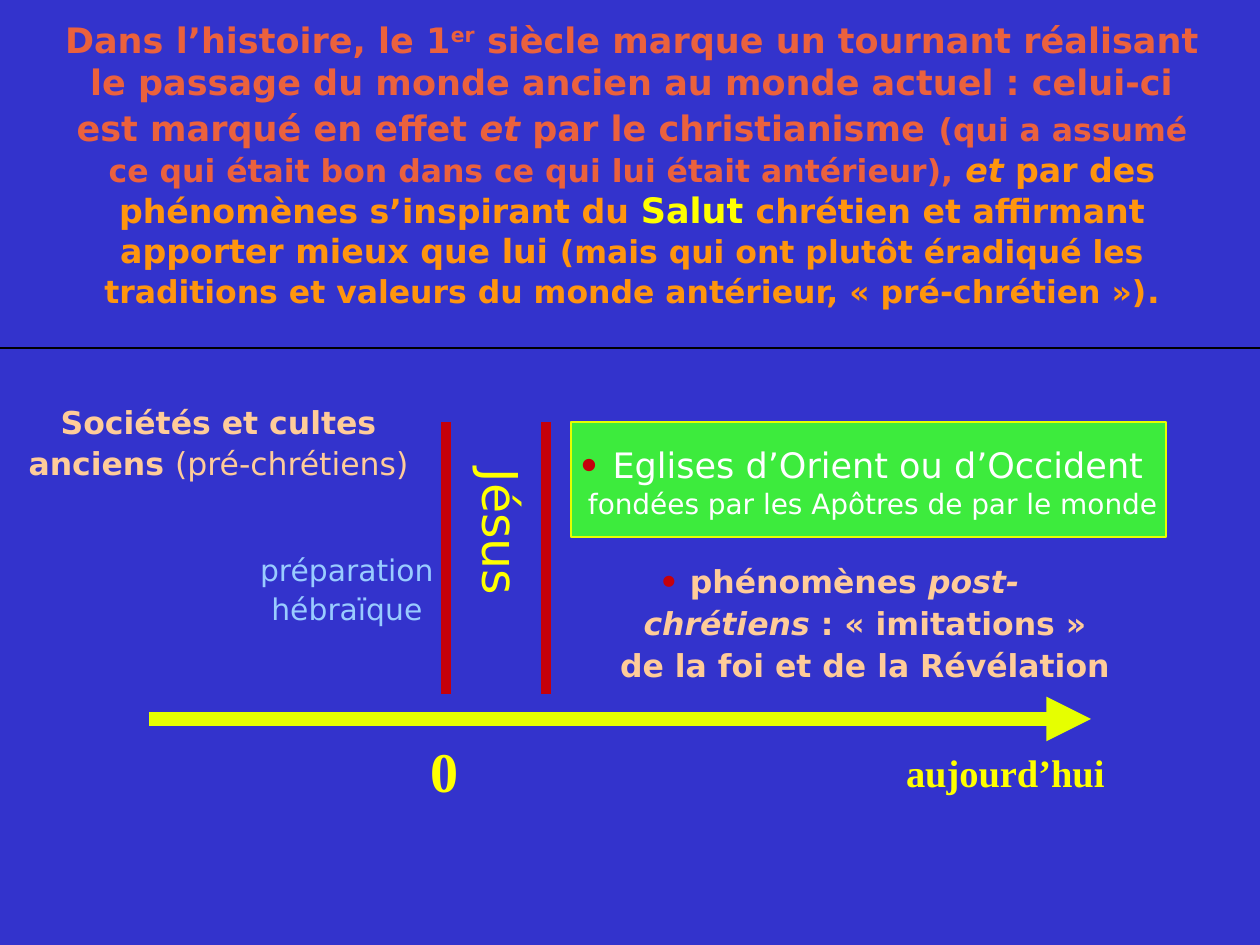
from lxml.etree import SubElement
from pptx import Presentation
from pptx.dml.color import RGBColor
from pptx.enum.shapes import MSO_CONNECTOR, MSO_SHAPE
from pptx.enum.text import MSO_ANCHOR, MSO_AUTO_SIZE, PP_ALIGN
from pptx.oxml.ns import qn
from pptx.util import Emu, Pt

SCALE = 914400 / 126
SANS = "DejaVu Sans"
SERIF = "Times New Roman"

BLUE = RGBColor(0x33, 0x33, 0xCC)
CORAL = RGBColor(0xEB, 0x61, 0x3D)
ORANGE = RGBColor(0xFF, 0x95, 0x0E)
YELLOW = RGBColor(0xFF, 0xFF, 0x00)
LIME = RGBColor(0xE6, 0xFF, 0x00)
RED = RGBColor(0xC5, 0x00, 0x0B)
PEACH = RGBColor(0xFF, 0xCC, 0x99)
GREEN = RGBColor(0x3D, 0xEB, 0x3D)
SKY = RGBColor(0x99, 0xCC, 0xFF)
WHITE = RGBColor(0xFF, 0xFF, 0xFF)
BLACK = RGBColor(0x00, 0x00, 0x00)


def px(length):
    return Emu(round(length * SCALE))


def style(size, color, bold=False, italic=False, name=SANS):
    return {"size": Pt(size), "color": color, "bold": bold, "italic": italic, "name": name}


def apply(target, values):
    for name, value in values.items():
        setattr(target, name, value)


def add_run(paragraph, text, values, baseline=None):
    run = paragraph.add_run()
    run.text = text
    for name, value in values.items():
        if name == "color":
            run.font.color.rgb = value
        else:
            setattr(run.font, name, value)
    if baseline:
        run.font._element.set("baseline", str(baseline))


def write(shape, paragraphs, insets, spacing=None, align=PP_ALIGN.LEFT,
          anchor=MSO_ANCHOR.TOP, indents=()):
    frame = shape.text_frame
    left, top, right, bottom = map(px, insets)
    apply(frame, {"word_wrap": True, "auto_size": MSO_AUTO_SIZE.NONE,
                  "vertical_anchor": anchor, "margin_left": left, "margin_top": top,
                  "margin_right": right, "margin_bottom": bottom})
    indents = dict(indents)
    for index, runs in enumerate(paragraphs):
        paragraph = frame.add_paragraph() if index else frame.paragraphs[0]
        apply(paragraph, {"alignment": align, "line_spacing": spacing,
                          "space_before": Pt(0), "space_after": Pt(0.4)})
        for side, length in {"marL": 0, "marR": 0, **indents.get(index, {})}.items():
            paragraph._p.get_or_add_pPr().set(side, str(px(length)))
        for run in runs:
            add_run(paragraph, *run)


def add_text(slide, box, paragraphs, insets=(0, 6, 0, 6), **options):
    shape = slide.shapes.add_textbox(*map(px, box))
    write(shape, paragraphs, insets, **options)
    return shape


def add_line(slide, start, end, color, width, arrow=False):
    line = slide.shapes.add_connector(MSO_CONNECTOR.STRAIGHT, *map(px, start + end))
    line.line.color.rgb = color
    line.line.width = Pt(width)
    if arrow:
        SubElement(line.line._get_or_add_ln(), qn("a:tailEnd"), type="triangle")
    SubElement(line._element.spPr, qn("a:effectLst"))


def add_header(slide, box):
    left, top, width, height = box
    title = slide.shapes.title
    apply(title, {"left": px(left + 49), "top": px(top + 26),
                  "width": px(width - 94), "height": px(277)})
    coral = style(20, CORAL, bold=True)
    orange = style(19, ORANGE, bold=True)
    write(title, [[
        ("Dans l’histoire, le 1", coral),
        ("er", coral, 33000),
        (" siècle marque un tournant réalisant le passage du monde ancien "
         "au monde actuel : celui-ci est marqué en effet ", coral),
        ("et", {**coral, "italic": True}),
        (" par le christianisme", coral),
        (" ", style(22, CORAL, bold=True)),
        ("(qui a assumé ce qui était bon dans ce qui lui était antérieur),",
         style(18, CORAL, bold=True)),
        (" ", orange),
        ("et", {**orange, "italic": True}),
        (" par des phénomènes s’inspirant du ", orange),
        ("Salut ", style(20, YELLOW, bold=True)),
        ("chrétien et affirmant apporter mieux que lui ", orange),
        ("(mais qui ont plutôt éradiqué les traditions et valeurs du monde "
         "antérieur, « pré-chrétien »)", style(18, ORANGE, bold=True)),
        (".", orange),
    ]], (5, 6, 5, 6), align=PP_ALIGN.CENTER, anchor=MSO_ANCHOR.MIDDLE)
    add_line(slide, (left, top + height), (left + width, top + height), BLACK, 0.75)


def add_ancient_world(slide, box):
    left, top, width, height = box
    centred = {"spacing": 1.1, "align": PP_ALIGN.CENTER}
    add_text(slide, (left, top, 387, 202), [[
        ("Sociétés et cultes anciens ", style(18, PEACH, bold=True)),
        ("(pré-chrétiens)", style(18, PEACH)),
    ]], **centred)
    add_text(slide, (left + width - 188, top + 149, 188, 89),
             [[("préparation hébraïque", style(17, SKY))]], **centred)


def add_turning_point(slide, box):
    left, top, width, height = box
    for x in (left, left + width):
        add_line(slide, (x, top), (x, top + height), RED, 5.67)
    name = add_text(slide, (left + 15, top, 58, 186),
                    [[("Jésus", style(28, YELLOW))]], (0, 47, 0, 0), spacing=0.78)
    name.text_frame._txBody.bodyPr.set("vert", "eaVert")


def add_present_world(slide, box):
    left, top, width, height = box
    churches = slide.shapes.add_shape(MSO_SHAPE.ROUNDED_RECTANGLE,
                                      *map(px, (left, top, width, 115)))
    churches.adjustments[0] = 0
    churches.shadow.inherit = False
    churches.fill.solid()
    churches.fill.fore_color.rgb = GREEN
    churches.line.color.rgb = LIME
    churches.line.width = Pt(0.75)
    write(churches, [
        [("• ", style(20, RED, bold=True)),
         ("Eglises d’Orient ou d’Occident", style(20, WHITE))],
        [("fondées par les Apôtres de par le monde", style(16, WHITE))],
    ], (3, 6, 3, 1), anchor=MSO_ANCHOR.MIDDLE,
        indents={0: {"marL": 4}, 1: {"marL": 14}})

    peach = style(18, PEACH, bold=True)
    italic = {**peach, "italic": True}
    add_text(slide, (left + 34, top + 130, 520, 142), [
        [("•", style(18, RED, bold=True)), (" phénomènes ", peach), ("post-", italic)],
        [("chrétiens ", italic), (": « imitations »", peach)],
        [("de la foi et de la Révélation", peach)],
    ], spacing=1.1, align=PP_ALIGN.CENTER, indents={0: {"marR": 52}})


def add_timeline(slide, box):
    left, top, width, height = box
    add_line(slide, (left, top), (left + width, top), LIME, 8.5, arrow=True)
    dates = [("0", 32, 269, 26, 123, 89), ("aujourd’hui", 22, 744, 34, 260, 54)]
    for text, size, x, y, text_width, text_height in dates:
        add_text(slide, (left + x, top + y, text_width, text_height),
                 [[(text, style(size, YELLOW, bold=True, name=SERIF))]],
                 (13, 6, 13, 6), spacing=0.78)


def main():
    presentation = Presentation()
    presentation.slide_width = px(1260)
    presentation.slide_height = px(945)
    slide = presentation.slides.add_slide(presentation.slide_layouts[5])
    slide.background.fill.solid()
    slide.background.fill.fore_color.rgb = BLUE
    add_header(slide, (0, 0, 1260, 348))
    add_timeline(slide, (149, 719, 942, 115))
    add_ancient_world(slide, (25, 393, 416, 238))
    add_turning_point(slide, (446, 422, 100, 272))
    add_present_world(slide, (571, 422, 595, 272))
    presentation.save("out.pptx")


if __name__ == "__main__":
    main()
